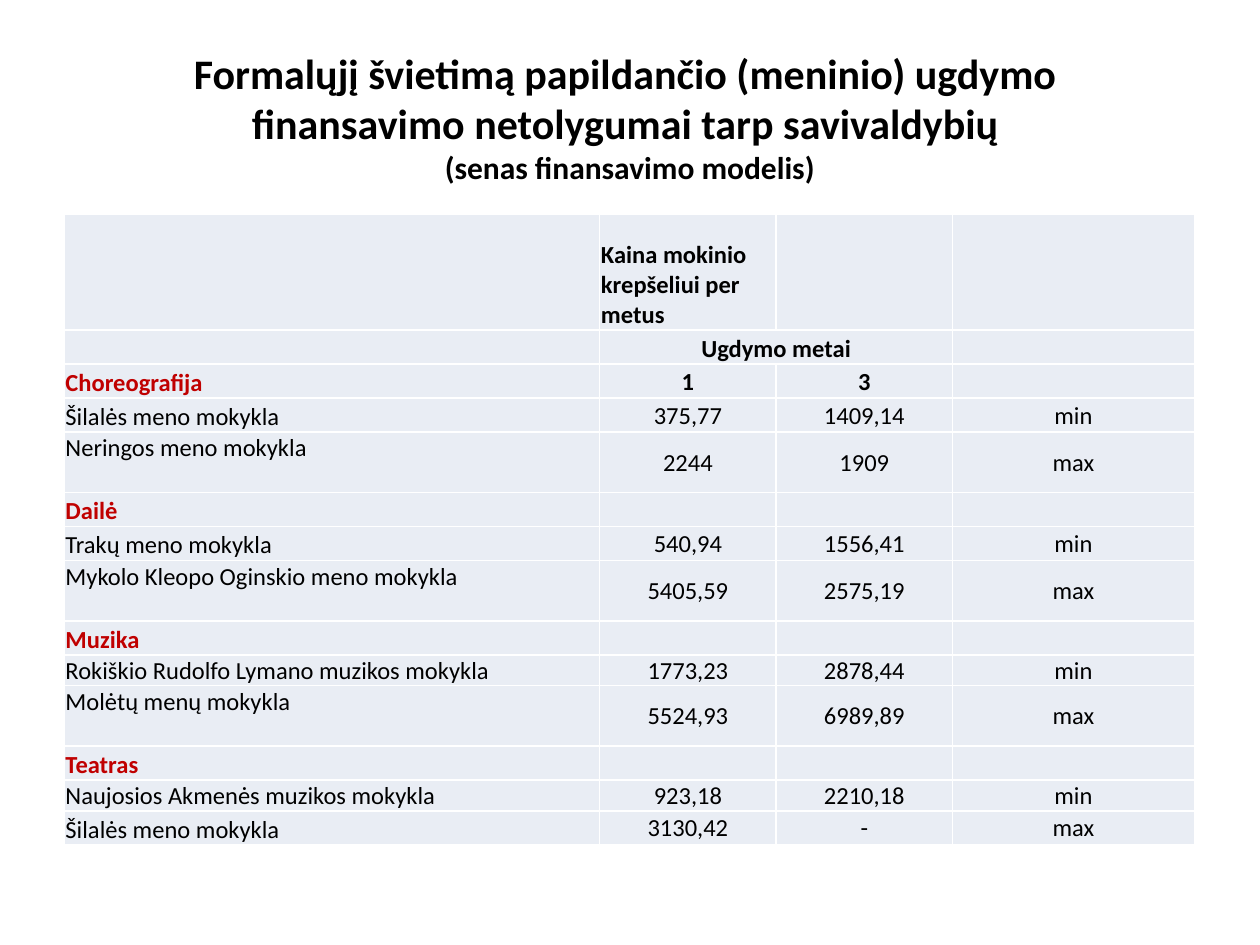
from dataclasses import dataclass
from typing import NamedTuple

from lxml.etree import SubElement
from pptx import Presentation
from pptx.dml.color import RGBColor
from pptx.enum.text import MSO_ANCHOR, PP_ALIGN
from pptx.oxml.ns import qn
from pptx.util import Inches, Pt


@dataclass(frozen=True)
class Theme:
    font: str = "Calibri"
    ink: str = "000000"
    accent: str = "C00000"
    cell: str = "E9EDF4"
    border: str = "FFFFFF"
    title: int = 24
    subtitle: int = 18
    body: int = 14
    empty: int = 10


class Row(NamedTuple):
    height: float
    cells: tuple[str, ...]
    kind: str = "data"
    name_anchor: MSO_ANCHOR = MSO_ANCHOR.BOTTOM


THEME = Theme()
WIDTH, HEIGHT = Inches(10), Inches(7.5)
COLUMNS = (0.425, 0.14, 0.14, 0.192)
LINE, TALL = 0.27, 0.48
TOP = MSO_ANCHOR.TOP

ROWS = (
    Row(0.92, ("", "Kaina mokinio krepšeliui per metus", "", ""), "price"),
    Row(LINE, ("", "Ugdymo metai", "", ""), "span"),
    Row(LINE, ("Choreografija", "1", "3", ""), "group"),
    Row(LINE, ("Šilalės meno mokykla", "375,77", "1409,14", "min")),
    Row(TALL, ("Neringos meno mokykla", "2244", "1909", "max"), name_anchor=TOP),
    Row(LINE, ("Dailė", "", "", ""), "group"),
    Row(LINE, ("Trakų meno mokykla", "540,94", "1556,41", "min")),
    Row(TALL, ("Mykolo Kleopo Oginskio meno mokykla", "5405,59", "2575,19", "max"), name_anchor=TOP),
    Row(LINE, ("Muzika", "", "", ""), "group"),
    Row(0.24, ("Rokiškio Rudolfo Lymano muzikos mokykla", "1773,23", "2878,44", "min")),
    Row(TALL, ("Molėtų menų mokykla", "5524,93", "6989,89", "max"), name_anchor=TOP),
    Row(LINE, ("Teatras", "", "", ""), "group"),
    Row(0.24, ("Naujosios Akmenės muzikos mokykla", "923,18", "2210,18", "min")),
    Row(LINE, ("Šilalės meno mokykla", "3130,42", "-", "max")),
)


def add_run(p, text: str, size: int, color: str = THEME.ink, bold: bool = False) -> None:
    r = p.add_run()
    r.text = text
    r.font.name, r.font.size, r.font.bold = THEME.font, Pt(size), bold
    r.font.color.rgb = RGBColor.from_string(color)


def add_title(s) -> None:
    sp = s.shapes.add_textbox(int(WIDTH * 0.05), int(HEIGHT * 0.04), int(WIDTH * 0.9), Inches(1.25))
    tf = sp.text_frame
    tf.word_wrap = True
    tf.vertical_anchor = MSO_ANCHOR.MIDDLE
    p = tf.paragraphs[0]
    p.alignment = PP_ALIGN.CENTER
    for line in ("Formalųjį švietimą papildančio (meninio) ugdymo ",
                 "finansavimo netolygumai tarp savivaldybių "):
        add_run(p, line, THEME.title, bold=True)
        p.add_line_break()
    add_run(p, "(senas finansavimo modelis)", THEME.subtitle, bold=True)


def set_borders(cell) -> None:
    props = cell._tc.get_or_add_tcPr()
    for i, side in enumerate(("lnL", "lnR", "lnT", "lnB")):
        ln = props.makeelement(qn(f"a:{side}"), {"w": str(Pt(1))})
        fill = SubElement(ln, qn("a:solidFill"))
        SubElement(fill, qn("a:srgbClr"), val=THEME.border)
        props.insert(i, ln)


def fill_cell(cell, row: Row, col: int) -> None:
    text = row.cells[col]
    cell.margin_left = cell.margin_right = cell.margin_top = Inches(0.01)
    cell.margin_bottom = 0
    cell.fill.solid()
    cell.fill.fore_color.rgb = RGBColor.from_string(THEME.cell)
    set_borders(cell)
    p = cell.text_frame.paragraphs[0]
    if not text:
        SubElement(p._p, qn("a:endParaRPr"), sz=str(THEME.empty * 100))
        return
    is_name = col == 0
    if is_name:
        cell.vertical_anchor = row.name_anchor
    elif row.kind in ("price", "span"):
        cell.vertical_anchor = MSO_ANCHOR.BOTTOM
    else:
        cell.vertical_anchor = MSO_ANCHOR.MIDDLE
    p.alignment = PP_ALIGN.LEFT if is_name or row.kind == "price" else PP_ALIGN.CENTER
    color = THEME.accent if is_name and row.kind == "group" else THEME.ink
    add_run(p, text, THEME.body, color, row.kind != "data")


def add_funding_table(s) -> None:
    widths = [int(WIDTH * share) for share in COLUMNS]
    height = Inches(sum(row.height for row in ROWS))
    table = s.shapes.add_table(len(ROWS), len(COLUMNS), Inches(0.51), Inches(1.7),
                               sum(widths), height).table
    table.first_row = table.horz_banding = False
    for column, width in zip(table.columns, widths):
        column.width = width
    for i, row in enumerate(ROWS):
        table.rows[i].height = Inches(row.height)
        for col in range(len(COLUMNS)):
            fill_cell(table.cell(i, col), row, col)
        if row.kind == "span":
            table.cell(i, 1).merge(table.cell(i, 2))


def main() -> None:
    prs = Presentation()
    prs.slide_width, prs.slide_height = WIDTH, HEIGHT
    s = prs.slides.add_slide(prs.slide_layouts[6])
    add_title(s)
    add_funding_table(s)
    prs.save("out.pptx")


if __name__ == "__main__":
    main()
